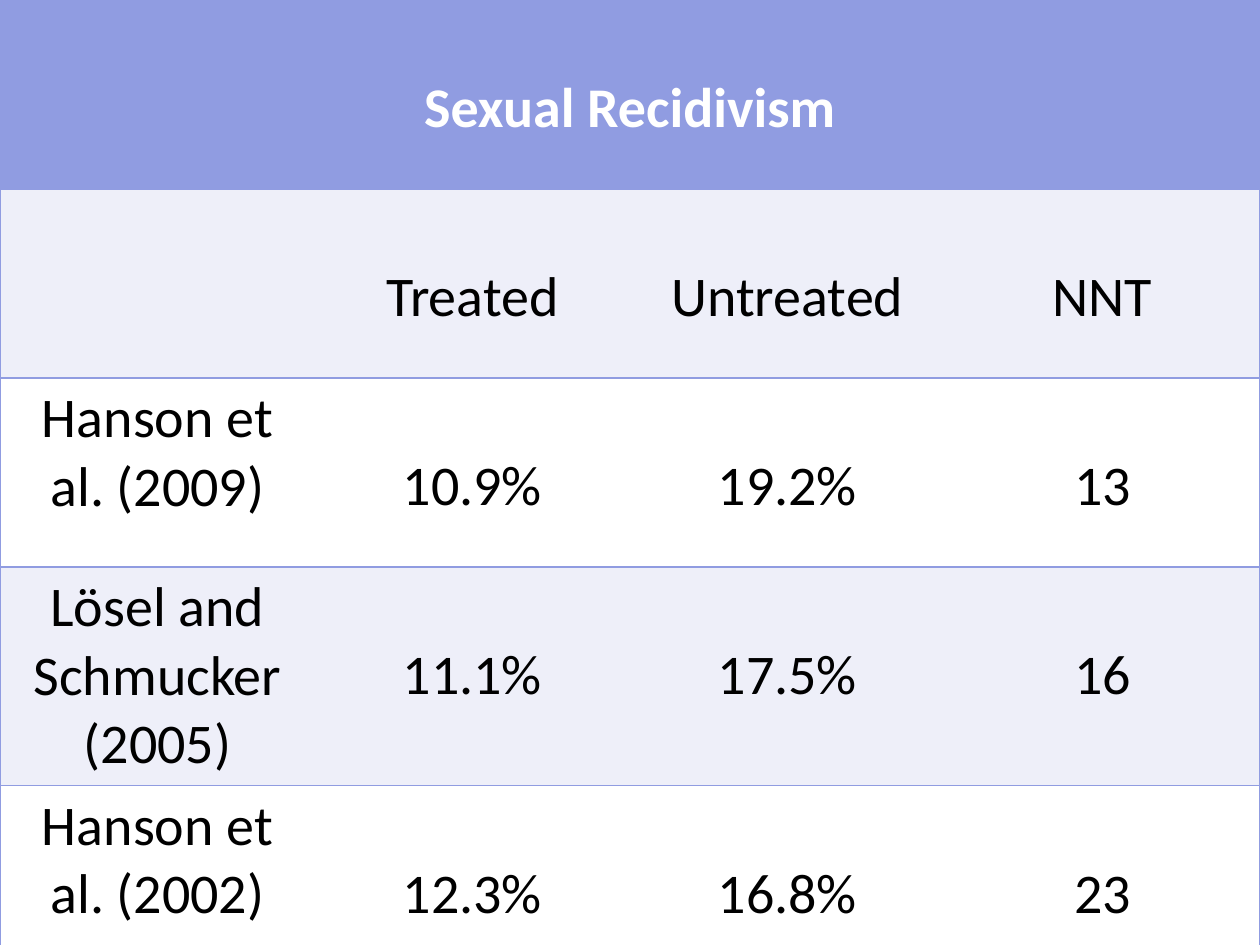
"""Build a one-slide table comparing sexual recidivism of treated and untreated groups."""
from lxml.etree import SubElement
from pptx import Presentation
from pptx.dml.color import RGBColor
from pptx.enum.text import MSO_ANCHOR, PP_ALIGN
from pptx.oxml.ns import qn
from pptx.util import Cm, Pt

ROWS = [
    ("", "Sexual Recidivism", "", ""),
    ("", "Treated", "Untreated", "NNT"),
    ("Hanson et al. (2009)", "10.9%", "19.2%", "13"),
    ("Lösel and Schmucker (2005)", "11.1%", "17.5%", "16"),
    ("Hanson et al. (2002)", "12.3%", "16.8%", "23"),
]
ROW_HEIGHTS = [3.81, 3.81, 3.81, 4.4, 3.81]
COL_WIDTH = 6.35
LABEL_TOP, VALUE_TOP = 0.13, 1.5

THEME = {
    "font": "Calibri",
    "size": 32,
    "back": "000000",
    "accent": "909CE1",
    "bands": ("FFFFFF", "EEEFF9"),
    "header_text": "FFFFFF",
    "text": "000000",
    "line": 1,
}


def add_border(cell, side, visible):
    """Draw one side of a cell, or hide it."""
    ln = SubElement(cell._tc.get_or_add_tcPr(), qn(f"a:ln{side}"), w=str(Pt(THEME["line"])))
    if visible:
        fill = SubElement(ln, qn("a:solidFill"))
        SubElement(fill, qn("a:srgbClr"), val=THEME["accent"])
    else:
        SubElement(ln, qn("a:noFill"))


def format_cell(cell, text, row, col):
    """Apply borders, fill and text to one cell."""
    header = row == 0
    sides = {"L": col == 0, "R": col == len(ROWS[0]) - 1, "T": True, "B": True}
    for side, visible in sides.items():
        add_border(cell, side, visible)
    cell.fill.solid()
    color = THEME["accent"] if header else THEME["bands"][row % 2]
    cell.fill.fore_color.rgb = RGBColor.from_string(color)
    cell.vertical_anchor = MSO_ANCHOR.TOP
    cell.margin_top = Cm(VALUE_TOP if col else LABEL_TOP)
    if not text:
        return
    p = cell.text_frame.paragraphs[0]
    p.alignment = PP_ALIGN.CENTER
    r = p.add_run()
    r.text = text
    r.font.name = THEME["font"]
    r.font.size = Pt(THEME["size"])
    r.font.bold = header
    r.font.color.rgb = RGBColor.from_string(THEME["header_text" if header else "text"])


def main():
    """Create the presentation and save it."""
    prs = Presentation()
    prs.slide_width, prs.slide_height = Cm(25.4), Cm(19.05)
    s = prs.slides.add_slide(prs.slide_layouts[6])
    s.background.fill.solid()
    s.background.fill.fore_color.rgb = RGBColor.from_string(THEME["back"])
    n_cols = len(ROWS[0])
    frame = s.shapes.add_table(len(ROWS), n_cols, 0, 0, Cm(COL_WIDTH * n_cols), Cm(sum(ROW_HEIGHTS)))
    table = frame.table
    for column in table.columns:
        column.width = Cm(COL_WIDTH)
    for i, (texts, height) in enumerate(zip(ROWS, ROW_HEIGHTS)):
        table.rows[i].height = Cm(height)
        for j, text in enumerate(texts):
            format_cell(table.cell(i, j), text, i, j)
    table.cell(0, 1).merge(table.cell(0, 2))
    prs.save("out.pptx")


if __name__ == "__main__":
    main()
